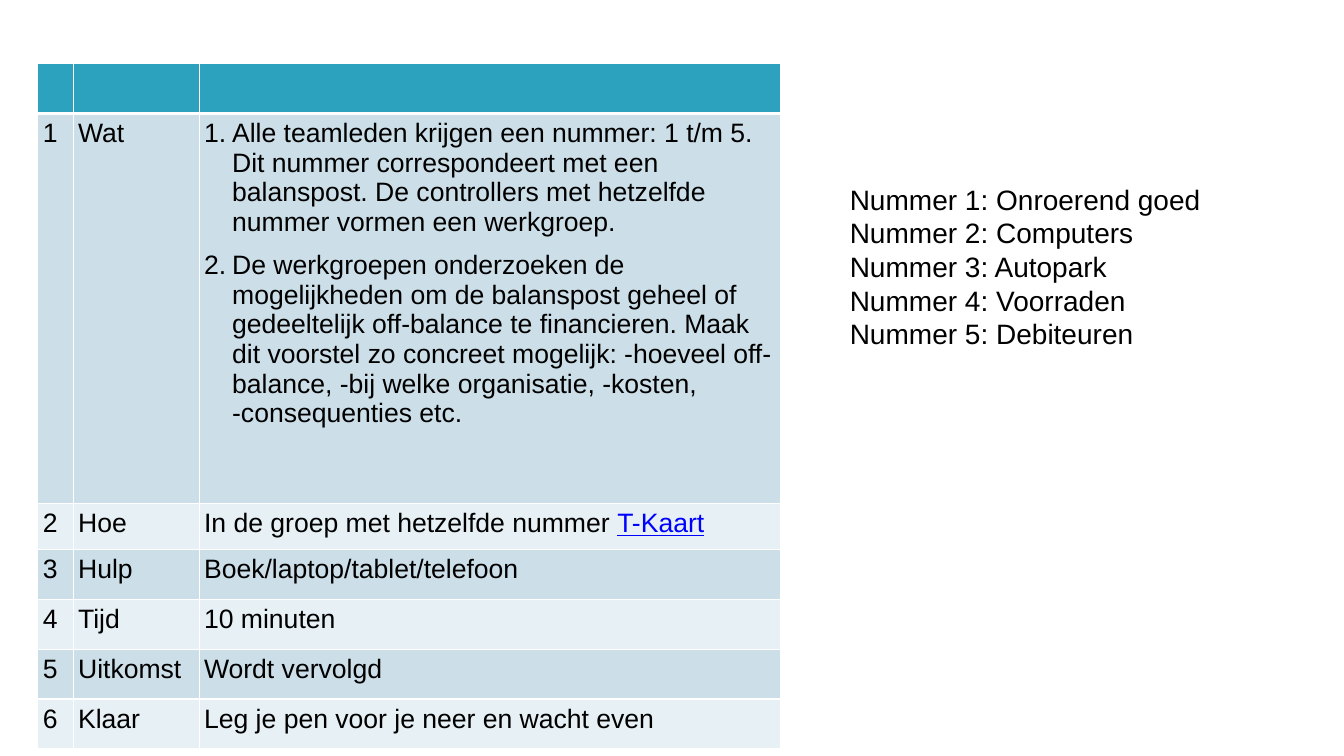
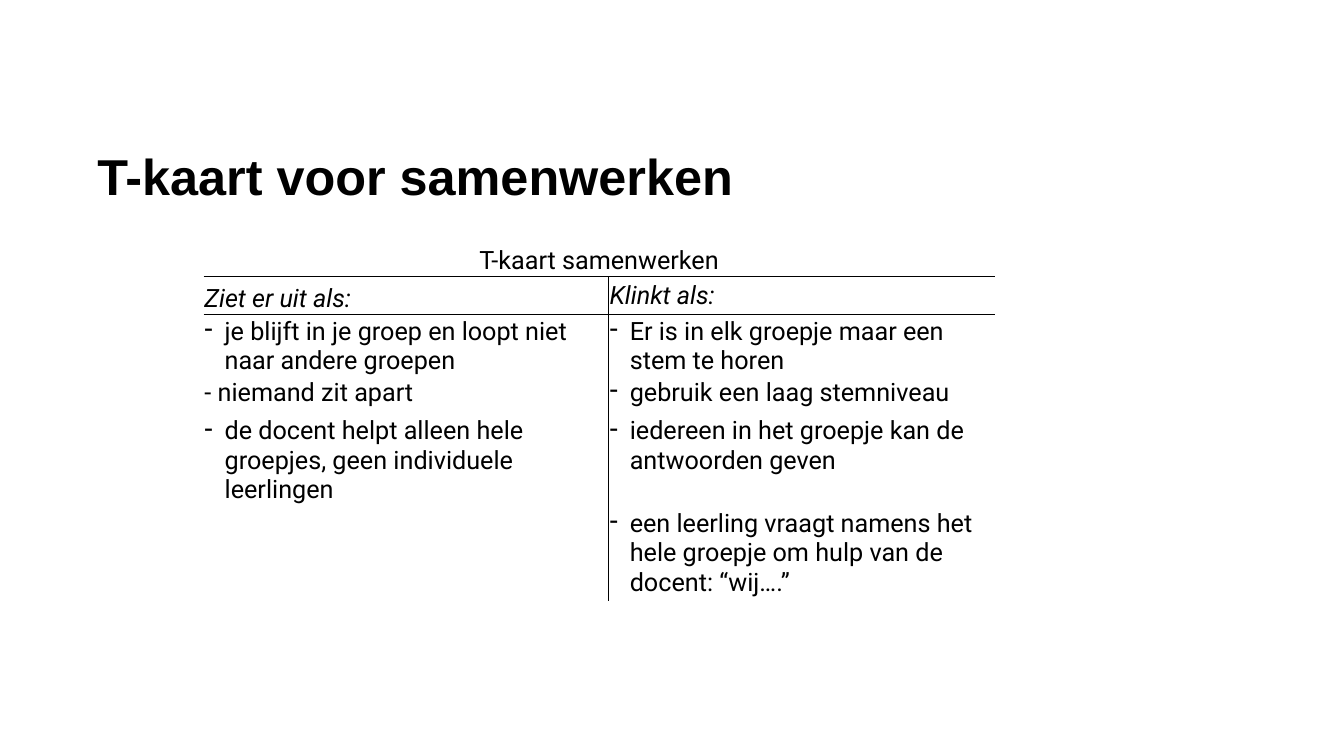
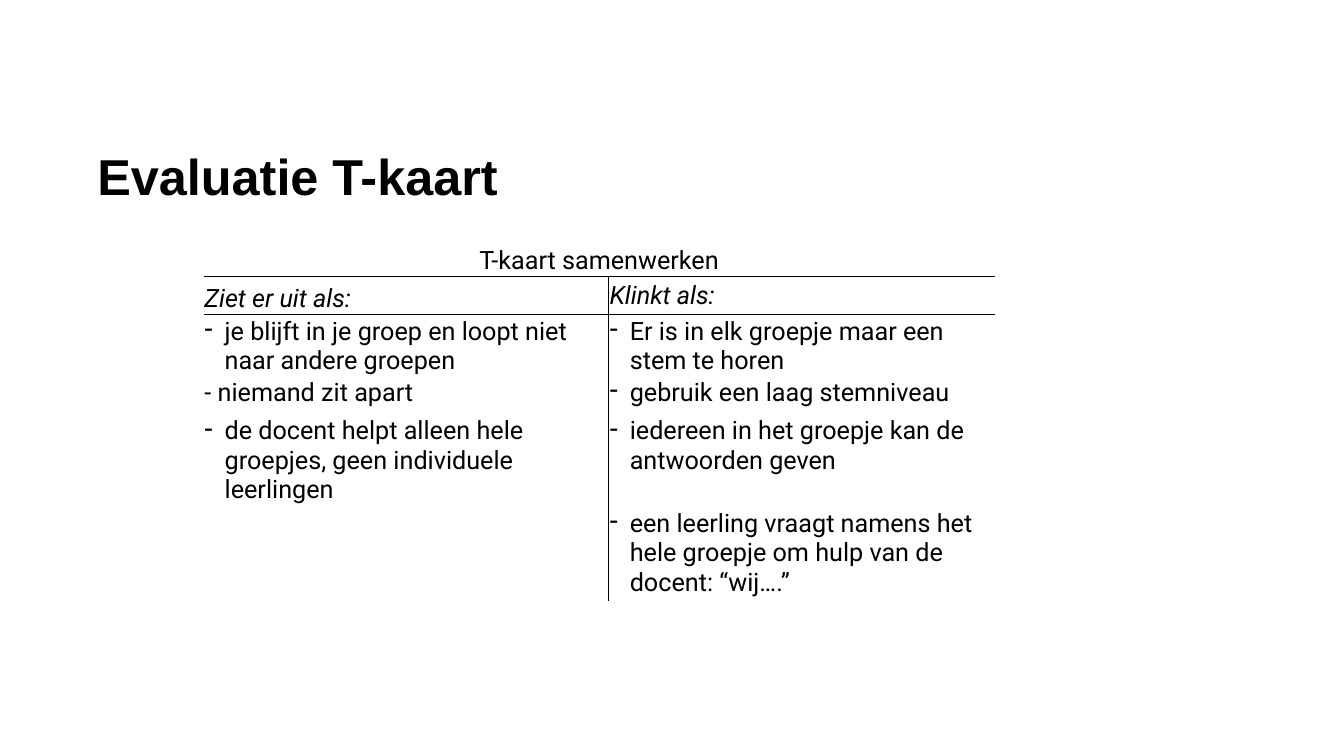
from dataclasses import dataclass
from lxml.etree import SubElement
from pptx import Presentation
from pptx.dml.color import RGBColor
from pptx.enum.text import MSO_ANCHOR, PP_ALIGN
from pptx.oxml.ns import qn
from pptx.util import Pt


@dataclass(frozen=True)
class Theme:
    ink: str = "000000"
    white: str = "FFFFFF"
    link: str = "0000FF"
    header: str = "2DA2BF"
    band_dark: str = "CCDFE8"
    band_light: str = "E7F0F4"
    font: str = "Arial"
    card_font: str = "Roboto"
    title_size: float = 36
    list_size: float = 20
    task_size: float = 19
    card_size: float = 18


THEME = Theme()
PLAIN_TABLE = "{2D5ABB26-0587-4C30-8999-92F81FD0307C}"

TASKS = [
    ("Wat", [
        "Alle teamleden krijgen een nummer: 1 t/m 5. Dit nummer correspondeert "
        "met een balanspost. De controllers met hetzelfde nummer vormen een werkgroep.",
        "De werkgroepen onderzoeken de mogelijkheden om de balanspost geheel of "
        "gedeeltelijk off-balance te financieren. Maak dit voorstel zo concreet "
        "mogelijk: -hoeveel off-balance, -bij welke organisatie, -kosten, "
        "-consequenties etc.",
    ]),
    ("Hoe", ["In de groep met hetzelfde nummer "]),
    ("Hulp", ["Boek/laptop/tablet/telefoon"]),
    ("Tijd", ["10 minuten"]),
    ("Uitkomst", ["Wordt vervolgd"]),
    ("Klaar", ["Leg je pen voor je neer en wacht even"]),
]
BALANCE_ITEMS = ["Onroerend goed", "Computers", "Autopark", "Voorraden", "Debiteuren"]

CARD_HEADS = ("Ziet er uit als:", "Klinkt als:")
CARD_ROWS = [
    ("je blijft in je groep en loopt niet naar andere groepen",
     "Er is in elk groepje maar een stem te horen"),
    ("- niemand zit apart", "gebruik een laag stemniveau"),
    ("de docent helpt alleen hele groepjes, geen individuele leerlingen",
     "iedereen in het groepje kan de antwoorden geven"),
    ("", "een leerling vraagt namens het hele groepje om hulp van de docent: “wij….”"),
]


def style(r, size, font=THEME.font, color=THEME.ink, **flags):
    r.font.size = Pt(size)
    r.font.name = font
    r.font.color.rgb = RGBColor.from_string(color)
    for name, value in flags.items():
        setattr(r.font, name, value)


def set_margins(box, margin):
    for side in ("left", "right", "top", "bottom"):
        setattr(box, f"margin_{side}", Pt(margin))


def add_marker(p, indent, tag, **attrs):
    pPr = p._p.get_or_add_pPr()
    pPr.set("marL", str(Pt(indent)))
    pPr.set("indent", str(-Pt(indent)))
    SubElement(pPr, qn(f"a:{tag}"), attrs)


def set_borders(cell, color, **widths):
    tcPr = cell._tc.get_or_add_tcPr()
    for side in "LRTB":
        if side in widths:
            ln = SubElement(tcPr, qn(f"a:ln{side}"), w=str(Pt(widths[side])))
            SubElement(SubElement(ln, qn("a:solidFill")), qn("a:srgbClr"), val=color)


def add_plain_table(s, left, top, widths, heights):
    frame = s.shapes.add_table(len(heights), len(widths), Pt(left), Pt(top),
                               Pt(sum(widths)), Pt(sum(heights)))
    table = frame.table
    table.first_row = table.horz_banding = False
    table._tbl.tblPr.find(qn("a:tableStyleId")).text = PLAIN_TABLE
    for col, width in zip(table.columns, widths):
        col.width = Pt(width)
    for row, height in zip(table.rows, heights):
        row.height = Pt(height)
    return table


def add_text_box(s, left, top, width, height, wrap):
    tf = s.shapes.add_textbox(Pt(left), Pt(top), Pt(width), Pt(height)).text_frame
    tf.word_wrap = wrap
    set_margins(tf, 3.6)
    return tf


def add_title(s, left, top, width, height, text):
    tf = add_text_box(s, left, top, width, height, True)
    tf.vertical_anchor = MSO_ANCHOR.MIDDLE
    p = tf.paragraphs[0]
    p.text = text
    p.line_spacing = 0.9
    style(p.runs[0], THEME.title_size, bold=True)


def add_task_table(s, left, top):
    table = add_plain_table(s, left, top, [25.2, 90, 415.4],
                            [36, 278.6, 33.1, 35.3, 36, 35.3, 35.3])
    rows = [("", "", [""])]
    rows += [(str(n), name, lines) for n, (name, lines) in enumerate(TASKS, 1)]
    for i, (number, name, lines) in enumerate(rows):
        band = THEME.band_dark if i % 2 else THEME.band_light
        for cell, texts in zip(table.rows[i].cells, ([number], [name], lines)):
            set_borders(cell, THEME.white, L=1, R=1, T=3 if i == 1 else 1, B=1 if i else 3)
            cell.fill.solid()
            cell.fill.fore_color.rgb = RGBColor.from_string(band if i else THEME.header)
            set_margins(cell, 3.6)
            cell.text_frame.text = "\n".join(texts)
            for k, p in enumerate(cell.text_frame.paragraphs):
                if len(texts) > 1:
                    add_marker(p, 20, "buAutoNum", type="arabicPeriod")
                if k:
                    p.space_before = Pt(10)
                for r in p.runs:
                    style(r, THEME.task_size)
        if name == "Hoe":
            r = table.cell(i, 2).text_frame.paragraphs[0].add_run()
            r.text = "T-Kaart"
            style(r, THEME.task_size, color=THEME.link, underline=True)


def add_balance_list(s, left, top, width, height):
    tf = add_text_box(s, left, top, width, height, False)
    tf.text = "\n".join(f"Nummer {n}: {item}" for n, item in enumerate(BALANCE_ITEMS, 1))
    for p in tf.paragraphs:
        style(p.runs[0], THEME.list_size)


def add_t_card(s, left, top):
    table = add_plain_table(s, left, top, [289.4, 275.8], [27.4] * 4 + [44.6, 23.8])
    table.cell(0, 0).merge(table.cell(0, 1))
    rows = [("T-kaart samenwerken", ""), CARD_HEADS] + CARD_ROWS
    for i, texts in enumerate(rows):
        for j, (cell, text) in enumerate(zip(table.rows[i].cells, texts)):
            if i == 0:
                set_borders(cell, THEME.ink, B=0.5)
            else:
                edges = {"L" if j else "R": 0.5}
                if i == 1:
                    edges["T"] = 0.5
                set_borders(cell, THEME.ink, **edges)
            set_margins(cell, 0.7)
            cell.vertical_anchor = MSO_ANCHOR.BOTTOM if i < 3 else MSO_ANCHOR.TOP
            if not text:
                continue
            p = cell.text_frame.paragraphs[0]
            p.text = text
            if i > 1 and not text.startswith("-"):
                add_marker(p, 14.4, "buChar", char="-")
            style(p.runs[0], THEME.card_size, THEME.card_font, italic=i == 1)
    table.cell(0, 0).text_frame.paragraphs[0].alignment = PP_ALIGN.CENTER
    table.cell(1, 1).vertical_anchor = MSO_ANCHOR.MIDDLE


def new_slide(prs):
    return prs.slides.add_slide(prs.slide_layouts[6])


def add_task_slide(prs):
    s = new_slide(prs)
    add_task_table(s, 27, 45)
    add_balance_list(s, 603.4, 126.7, 288, 146)


def add_card_slide(prs, title):
    s = new_slide(prs)
    add_title(s, 66, 106, 828, 44, title)
    add_t_card(s, 145.4, 170)


def main():
    prs = Presentation()
    prs.slide_width, prs.slide_height = Pt(960), Pt(540)
    add_task_slide(prs)
    for title in ("T-kaart voor samenwerken", "Evaluatie T-kaart"):
        add_card_slide(prs, title)
    prs.save("out.pptx")


if __name__ == "__main__":
    main()
